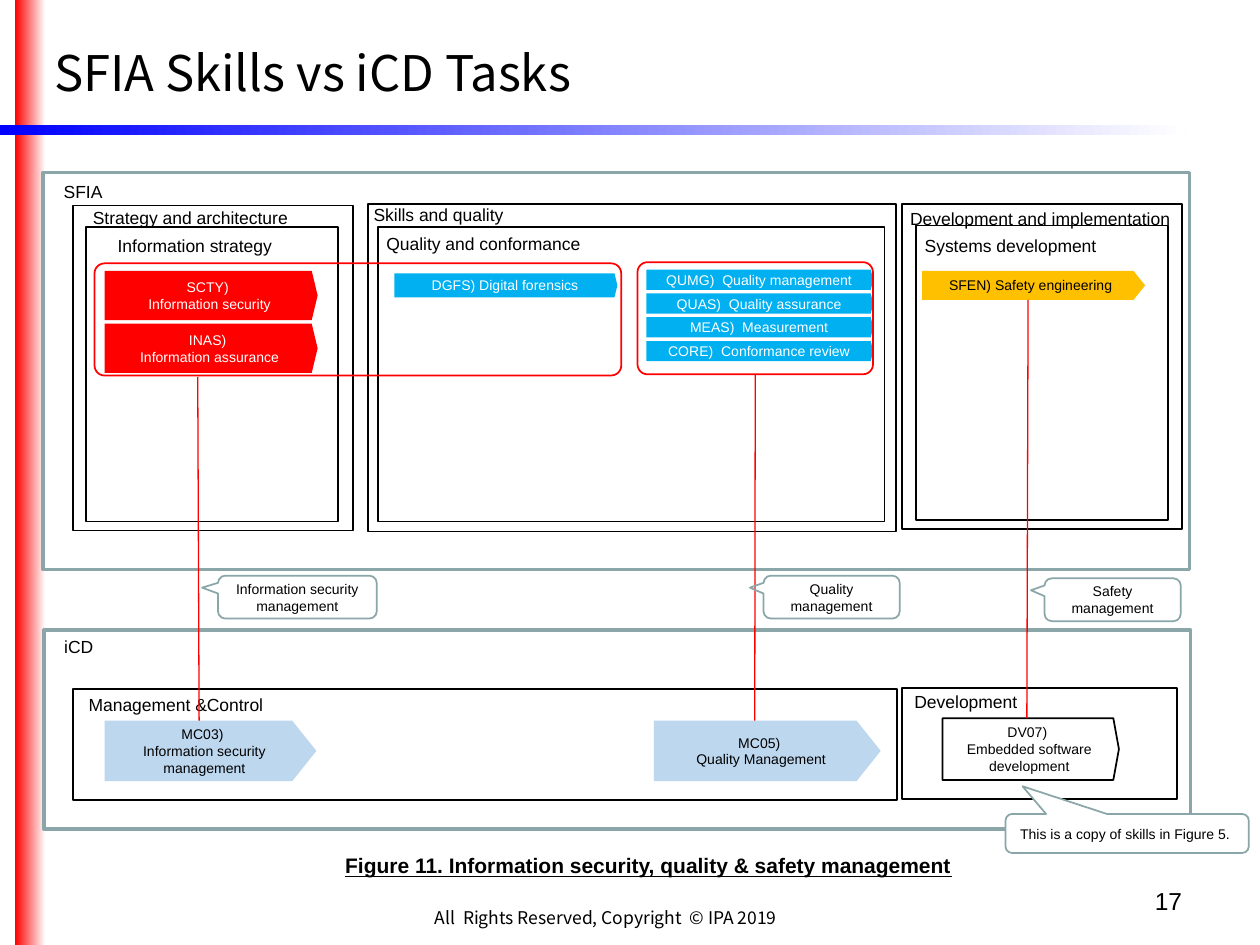
from lxml import etree
from pptx import Presentation
from pptx.dml.color import RGBColor
from pptx.enum import shapes, text
from pptx.oxml import ns
from pptx.util import Pt

BLACK, WHITE, RED = "000000", "FFFFFF", "FF0000"
SKY, PALE, AMBER, SLATE = "00B0F0", "BDD7EE", "FFC000", "8AA6A8"
SANS, HEADING = "Arial", "Noto Sans CJK JP"
TOP, MIDDLE = text.MSO_ANCHOR.TOP, text.MSO_ANCHOR.MIDDLE
CENTER = text.PP_ALIGN.CENTER
KIND = shapes.MSO_SHAPE
rgb = RGBColor.from_string

deck = Presentation()
deck.slide_width, deck.slide_height = Pt(720), Pt(540)
slide = deck.slides.add_slide(deck.slide_layouts[6])


def draw(kind, box, fill=None, line=None, weight=1, adjust=()):
    shape = slide.shapes.add_shape(kind, *map(Pt, box))
    shape.shadow.inherit = False
    for index, value in enumerate(adjust):
        shape.adjustments[index] = value
    if fill:
        shape.fill.solid()
        shape.fill.fore_color.rgb = rgb(fill)
    else:
        shape.fill.background()
    if line:
        shape.line.color.rgb = rgb(line)
        shape.line.width = Pt(weight)
    else:
        shape.line.fill.background()
    return shape


def write(shape, words, size, color=BLACK, anchor=MIDDLE, align=CENTER, **more):
    """Put words in a shape; a vertical tab breaks a line, a newline a paragraph."""
    frame = shape.text_frame
    frame.word_wrap = True
    frame.vertical_anchor = anchor
    frame.text = words
    for paragraph in frame.paragraphs:
        paragraph.alignment = align
        for name, value in {"name": SANS, "size": Pt(size), **more}.items():
            setattr(paragraph.font, name, value)
        paragraph.font.color.rgb = rgb(color)


# Decorative bands
for box, start in (((8.64, 0, 17.28, 540), RED), ((0, 71.4, 677.5, 5.6), "0000FF")):
    band = draw(KIND.RECTANGLE, box)
    band.fill.gradient()
    band.fill.gradient_angle = 0
    for stop, color, position in zip(band.fill.gradient_stops, (start, WHITE), (0, 1)):
        stop.color.rgb = rgb(color)
        stop.position = position

# Numbered title
title = slide.shapes.add_textbox(Pt(23.8), Pt(20.9), Pt(380), Pt(41))
title_properties = title.text_frame.paragraphs[0]._p.get_or_add_pPr()
title_properties.set("marL", str(Pt(40.5)))
title_properties.set("indent", str(Pt(-40.5)))
etree.SubElement(title_properties, ns.qn("a:buFont"), typeface="+mj-lt")
etree.SubElement(title_properties, ns.qn("a:buAutoNum"), type="arabicPeriod")
write(title, "SFIA Skills vs iCD Tasks", 28, anchor=TOP,
      align=text.PP_ALIGN.LEFT, name=HEADING)

# Frameworks and the categories inside them
for box in ((24.5, 98.6, 655.2, 226.8), (25.2, 360, 655.2, 113.8)):
    draw(KIND.RECTANGLE, box, line=SLATE, weight=2)

categories = (
    (41.8, 117.4, 159.8, 185.8), (49, 129.6, 144, 168.5),
    (210.2, 116.6, 301.7, 187.2), (216, 129.6, 289.4, 168.5),
    (515.5, 116.6, 159.8, 185.8), (523.4, 128.9, 144, 168.5),
    (41.8, 393.8, 470.9, 63.4), (515.5, 393.1, 157, 63.4),
)
for box in categories:
    draw(KIND.RECTANGLE, box, line=BLACK)

labels = (
    ("SFIA", (22.3, 100.1, 50.4, 19.4), TOP),
    ("iCD", (23, 360, 43.9, 19.4), TOP),
    ("Strategy and architecture", (42.5, 115.2, 132.5, 18), MIDDLE),
    ("Information strategy", (54, 128.9, 114.5, 22.3), MIDDLE),
    ("Skills and quality", (198.7, 111.6, 103.7, 22.3), MIDDLE),
    ("Quality and conformance", (209.5, 128.2, 133.2, 22.3), MIDDLE),
    ("Development and implementation", (512.6, 113.8, 163.4, 21.6), MIDDLE),
    ("Systems development", (519.1, 129.6, 116.6, 20.9), MIDDLE),
    ("Management &Control", (43.2, 396.7, 114.5, 11.5), MIDDLE),
    ("Development", (501.1, 396.7, 101.5, 8.6), MIDDLE),
)
for words, box, anchor in labels:
    label = slide.shapes.add_textbox(*map(Pt, box))
    label.text_frame.margin_left = label.text_frame.margin_right = 0
    write(label, words, 10, anchor=anchor)

# Skills and tasks
plates = [
    ("SCTY) \nInformation security", (59.8, 154.8, 121.7, 28.1), 0.12, RED, WHITE),
    ("INAS) \nInformation assurance", (59.8, 185, 121.7, 28.1), 0.12, RED, WHITE),
    ("DGFS) Digital forensics", (225.4, 156.2, 127.4, 13.7), 0.12, SKY, WHITE),
    ("SFEN) Safety engineering", (527, 154.8, 127.4, 16.6), 0.4, AMBER, BLACK),
    ("MC03) \vInformation security management", (59.8, 411.8, 121, 34.6), 0.4, PALE, BLACK),
    ("MC05) \vQuality Management", (373.7, 411.8, 129.6, 34.6), 0.4, PALE, BLACK),
    ("DV07) \vEmbedded software development", (538.6, 410.4, 100.8, 35.3), 0.09, WHITE, BLACK),
]
quality_skills = ("QUMG)  Quality management", "QUAS)  Quality assurance",
                  "MEAS)  Measurement", "CORE)  Conformance review")
for row, words in enumerate(quality_skills):
    plates.append((words, (369.4, 154.1 + 13.6 * row, 129.6, 11.5), 0.12, SKY, WHITE))
for words, box, point, fill, color in plates:
    outline = BLACK if fill == WHITE else None
    write(draw(KIND.PENTAGON, box, fill, outline, adjust=[point]), words, 8, color)

# Skill groups and their links to tasks
security_group, quality_group = [
    draw(KIND.ROUNDED_RECTANGLE, box, line=RED, adjust=[0.09])
    for box in ((54, 150.5, 301, 64.1), (364.3, 149.8, 134.6, 64.1))
]
links = (
    (113, 215.3, 113.8, 411.8, None),
    (431.6, 213.9, 431.3, 411.8, quality_group),
    (587.5, 171.4, 586.8, 410.4, None),
)
for *ends, group in links:
    link = slide.shapes.add_connector(shapes.MSO_CONNECTOR.STRAIGHT, *map(Pt, ends))
    if group:
        link.begin_connect(group, 2)
    link.line.color.rgb = rgb(RED)
    link.line.width = Pt(0.75)
    etree.SubElement(link._element.spPr, ns.qn("a:effectLst"))

# Callouts
side_tail = (-0.6, -0.22, 0.17)
callouts = (
    ("Information security management", (124.6, 329, 90.7, 24.5), None, side_tail),
    ("Quality management", (436.3, 329, 77.8, 24.5), None, side_tail),
    ("Safety management", (596.9, 330.5, 77.8, 24.5), None, side_tail),
    ("This is a copy of skills in Figure 5. ", (574.6, 465.1, 139, 22.3), WHITE,
     (-0.43, -1.21, 0.17)),
)
for words, box, fill, tail in callouts:
    write(draw(KIND.ROUNDED_RECTANGULAR_CALLOUT, box, fill, SLATE, adjust=tail), words, 8)

# Caption and footer
caption = slide.shapes.add_textbox(Pt(128.2), Pt(483.8), Pt(484.6), Pt(21.6))
write(caption, "Figure 11. Information security, quality & safety management", 12,
      anchor=TOP, bold=True, underline=True)
rights = slide.shapes.add_textbox(Pt(211), Pt(514.8), Pt(270), Pt(22.3))
write(rights, "All  Rights Reserved, Copyright  © IPA 2019", 10, anchor=TOP, name=HEADING)
page_number = slide.shapes.add_textbox(Pt(651.6), Pt(502.6), Pt(31), Pt(22.3))
write(page_number, "17", 14, anchor=TOP, align=text.PP_ALIGN.RIGHT)

deck.save("out.pptx")
